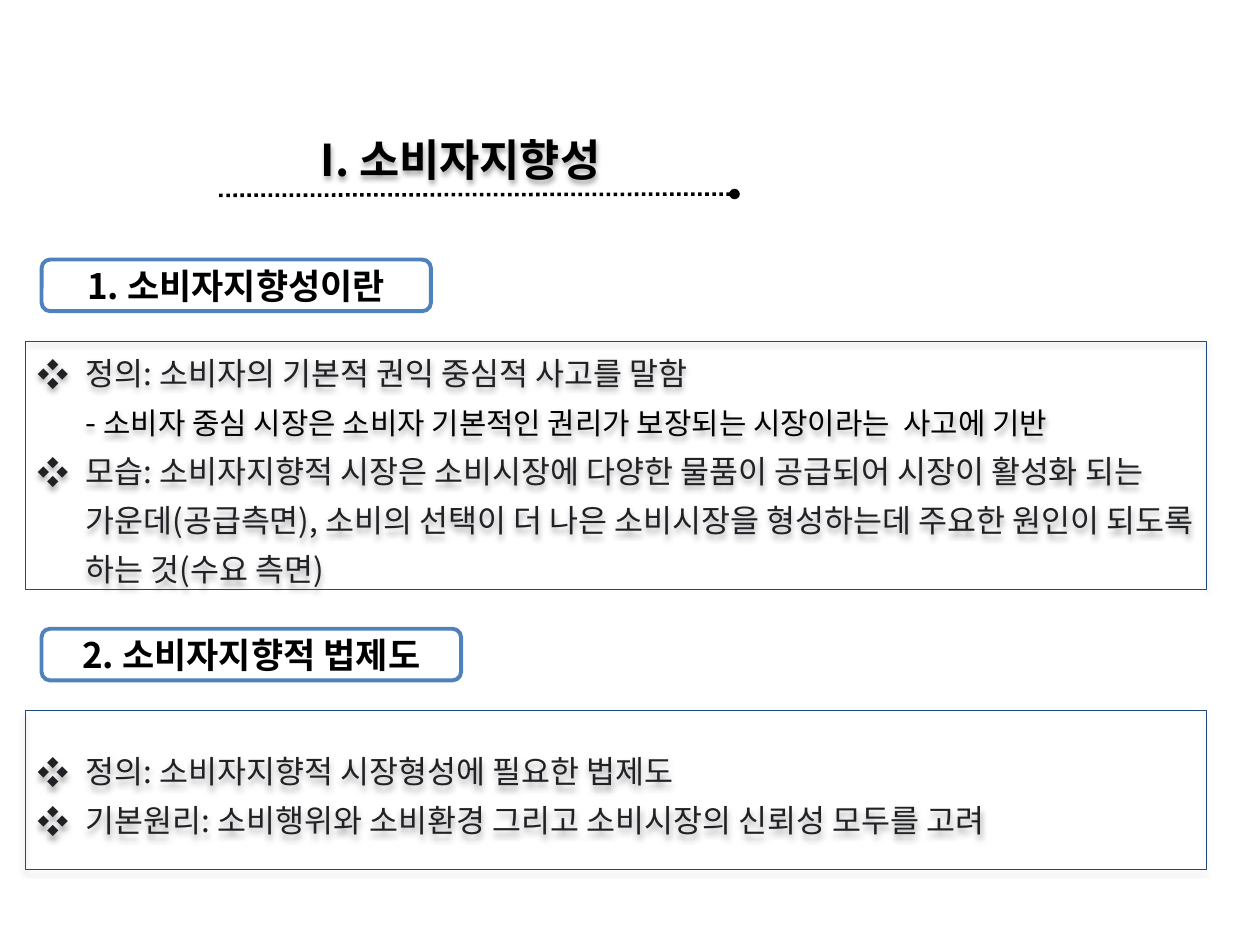
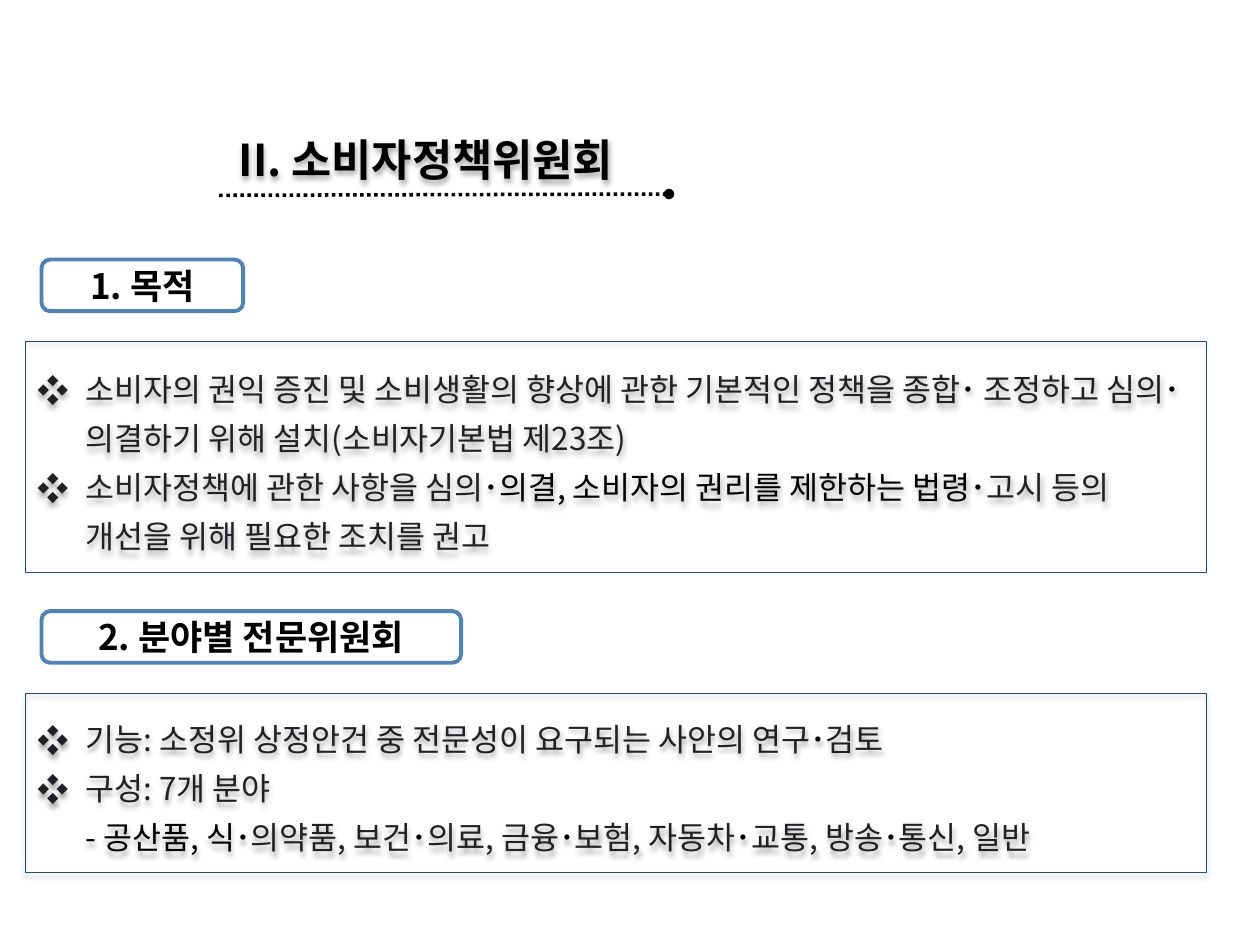
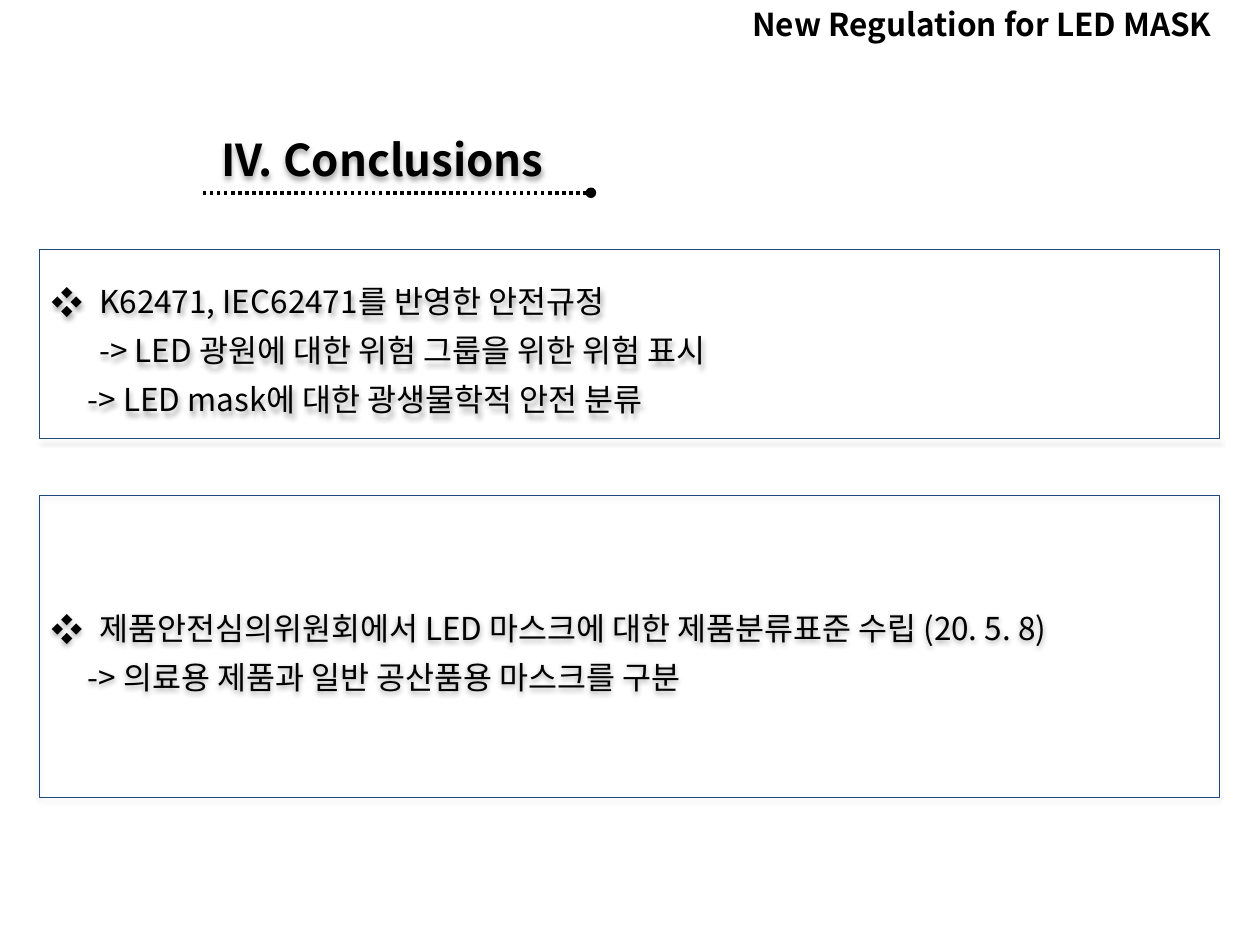
from typing import NamedTuple

from lxml import etree
from pptx import Presentation
from pptx.dml.color import RGBColor
from pptx.enum.dml import MSO_LINE
from pptx.enum.shapes import MSO_CONNECTOR, MSO_SHAPE
from pptx.enum.text import MSO_ANCHOR, PP_ALIGN
from pptx.oxml.ns import qn
from pptx.util import Inches, Pt

BLACK = RGBColor(0x00, 0x00, 0x00)
CHARCOAL = RGBColor(0x20, 0x21, 0x24)
BLUE = RGBColor(0x4F, 0x81, 0xBD)
NAVY = RGBColor(0x1F, 0x49, 0x7D)

BODY_FONT = "Noto Sans CJK KR"
DOT_FONT = "Arial"
BODY_SIZE = 18

RECTANGLE = MSO_SHAPE.RECTANGLE
ROUNDED = MSO_SHAPE.ROUNDED_RECTANGLE
STRAIGHT = MSO_CONNECTOR.STRAIGHT
DOTTED = MSO_LINE.ROUND_DOT
MIDDLE = MSO_ANCHOR.MIDDLE
CENTER = PP_ALIGN.CENTER

COLUMNS, ROWS = 100, 75
SLIDE_WIDTH, SLIDE_HEIGHT = Inches(10), Inches(7.5)
PANEL_WIDTH = 93.7
HEADING_RISE, HEADING_HEIGHT = 6.5, 4.1
HANGING, CONTINUED = 0.38, 0.29


class Span(NamedTuple):
    text: str
    color: RGBColor = CHARCOAL
    size: float = BODY_SIZE
    font: str = BODY_FONT


class Item(NamedTuple):
    spans: list
    bullet: bool = True


def plain(text, color=CHARCOAL, bullet=True):
    return Item([Span(text, color)], bullet)


def dotted(*pieces):
    """Join spans with black middle dots; a string becomes a charcoal span."""
    spans = []
    for piece in pieces:
        if spans:
            spans.append(Span("･", BLACK, font=DOT_FONT))
        spans.append(Span(piece) if isinstance(piece, str) else piece)
    return spans


def set_font(font, properties, span, bold=False):
    """Set Latin and East Asian faces alike, on a run or a paragraph."""
    font.name = span.font
    font.size = Pt(span.size)
    font.bold = bold
    font.color.rgb = span.color
    etree.SubElement(properties, qn("a:ea"), typeface=span.font)


def set_paragraph_font(paragraph, span, bold=False):
    font = paragraph.font
    font.size = Pt(span.size)
    set_font(font, paragraph._p.pPr.find(qn("a:defRPr")), span, bold)


def add_shadow(shape):
    effects = shape._element.spPr.find(qn("a:effectLst"))
    shadow = etree.SubElement(effects, qn("a:outerShdw"), blurRad=str(Pt(3.1)),
                              dist=str(Pt(1.8)), dir="5400000", rotWithShape="0")
    color = etree.SubElement(shadow, qn("a:srgbClr"), val=str(BLACK))
    etree.SubElement(color, qn("a:alpha"), val="35000")


class Deck:
    def __init__(self):
        self.presentation = Presentation()
        self.presentation.slide_width = SLIDE_WIDTH
        self.presentation.slide_height = SLIDE_HEIGHT
        self.page = None

    def new_page(self):
        blank = self.presentation.slide_layouts[6]
        self.page = self.presentation.slides.add_slide(blank)

    def place(self, *lengths):
        """Turn alternating columns and rows into slide lengths."""
        units = (SLIDE_WIDTH / COLUMNS, SLIDE_HEIGHT / ROWS)
        return [round(length * units[index % 2])
                for index, length in enumerate(lengths)]

    def outline(self, kind, area, color=None, width=0):
        """Add an unfilled shape, with a line only if a colour is given."""
        shape = self.page.shapes.add_shape(kind, *self.place(*area))
        shape.shadow.inherit = False
        shape.fill.background()
        if color is None:
            shape.line.fill.background()
        else:
            shape.line.color.rgb = color
            shape.line.width = Pt(width)
        shape.text_frame.word_wrap = True
        shape.text_frame.vertical_anchor = MIDDLE
        return shape

    def caption(self, box, text, size):
        paragraph = box.text_frame.paragraphs[0]
        paragraph.text = text
        paragraph.alignment = CENTER
        set_paragraph_font(paragraph, Span(text, BLACK, size), bold=True)

    def title(self, text, left, width, rule_start, rule_end):
        box = self.outline(ROUNDED, (left, 9.9, width, 5.4))
        add_shadow(box)
        self.caption(box, text, 25)
        rule = self.page.shapes.add_connector(
            STRAIGHT, *self.place(*rule_start, *rule_end))
        rule.line.color.rgb = BLACK
        rule.line.width = Pt(2)
        rule.line.dash_style = DOTTED
        properties = rule._element.spPr
        etree.SubElement(properties.find(qn("a:ln")), qn("a:tailEnd"), type="oval")
        etree.SubElement(properties, qn("a:effectLst"))

    def panel(self, left, top, height, items):
        box = self.outline(RECTANGLE, (left, top, PANEL_WIDTH, height), NAVY, 0.25)
        add_shadow(box)
        frame = box.text_frame
        for index, item in enumerate(items):
            paragraph = frame.add_paragraph() if index else frame.paragraphs[0]
            self.fill_item(paragraph, item)

    def fill_item(self, paragraph, item):
        paragraph.line_spacing = 1.3
        properties = paragraph._p.get_or_add_pPr()
        indent = HANGING if item.bullet else CONTINUED
        properties.set("marL", str(Inches(indent)))
        properties.set("indent", str(-Inches(indent) if item.bullet else 0))
        paragraph.alignment = PP_ALIGN.LEFT
        if item.bullet:
            etree.SubElement(properties, qn("a:buFont"), typeface="Wingdings")
            properties[-1].set("typeface", BODY_FONT)
            etree.SubElement(properties, qn("a:buChar"), char="❖")
        set_paragraph_font(paragraph, item.spans[0])
        for span in item.spans:
            for index, line in enumerate(span.text.split("\n")):
                if index:
                    paragraph.add_line_break()
                if line:
                    run = paragraph.add_run()
                    run.text = line
                    if span[1:] != item.spans[0][1:]:
                        set_font(run.font, run._r.get_or_add_rPr(), span)

    def section(self, heading, heading_width, top, height, items):
        """Add a panel with its numbered heading above it."""
        self.panel(2, top, height, items)
        area = (3.3, top - HEADING_RISE, heading_width, HEADING_HEIGHT)
        self.caption(self.outline(ROUNDED, area, BLUE, 2.25), heading, 20)

    def header(self, text):
        box = self.page.shapes.add_textbox(*self.place(56.3, -0.1, 43.3, 4))
        box.text_frame.word_wrap = True
        self.caption(box, text, BODY_SIZE)


def build_orientation(deck):
    deck.new_page()
    deck.title("I. 소비자지향성", 16.1, 40.9, (17.4, 15.5), (58.3, 15.4))
    deck.section("1. 소비자지향성이란", 30.9, 27.1, 19.7, [
        Item([
            Span("정의: 소비자의 기본적 권익 중심적 사고를 말함\n"),
            Span("- ", BLACK),
            Span("소비자 중심 시장은 소비자 기본적인 권리가 보장되는 시장이라는  사고에 기반",
                 BLACK, 17),
        ]),
        plain("모습: 소비자지향적 시장은 소비시장에 다양한 물품이 공급되어 시장이 활성화 되는 "
              "가운데(공급측면), 소비의 선택이 더 나은 소비시장을 형성하는데 주요한 원인이 "
              "되도록 하는 것(수요 측면)"),
    ])
    deck.section("2. 소비자지향적 법제도", 33.3, 56.4, 12.6, [
        plain("정의: 소비자지향적 시장형성에 필요한 법제도"),
        plain("기본원리: 소비행위와 소비환경 그리고 소비시장의 신뢰성 모두를 고려"),
    ])


def build_committee(deck):
    deck.new_page()
    deck.title("II. 소비자정책위원회", 16.1, 35.4, (17.4, 15.5), (53.1, 15.4))
    deck.section("1. 목적", 16, 27.1, 18.3, [
        Item(dotted("소비자의 권익 증진 및 소비생활의 향상에 관한 기본적인 정책을 종합",
                    " 조정하고 심의", "의결하기 위해 설치(소비자기본법 제23조)")),
        Item(dotted("소비자정책에 관한 사항을 심의",
                    Span("의결, 소비자의 권리를 제한하는 법령", BLACK),
                    "고시 등의 개선을 위해 필요한 조치를 권고")),
    ])
    fields = dotted(Span("- 공산품, 식", BLACK), "의약품, 보건", "의료, 금융",
                    "보험, 자동차", "교통, 방송", "통신, 일반")
    deck.section("2. 분야별 전문위원회", 33.3, 55, 14.2, [
        Item(dotted("기능: 소정위 상정안건 중 전문성이 요구되는 사안의 연구", "검토")),
        Item([Span("구성: 7개 분야\n"), *fields]),
    ])


def build_conclusions(deck):
    deck.new_page()
    deck.title("IV. Conclusions", 14, 32.7, (16.1, 15.3), (46.9, 15.3))
    deck.panel(3.1, 19.8, 15, [
        plain("K62471, IEC62471를 반영한 안전규정\n"
              "-> LED 광원에 대한 위험 그룹을 위한 위험 표시", BLACK),
        plain("-> LED mask에 대한 광생물학적 안전 분류", BLACK, bullet=False),
    ])
    deck.panel(3.1, 39.3, 24, [
        plain("제품안전심의위원회에서 LED 마스크에 대한 제품분류표준 수립 (20. 5. 8)", BLACK),
        plain("-> 의료용 제품과 일반 공산품용 마스크를 구분", BLACK, bullet=False),
    ])
    deck.header("New Regulation for LED MASK")


def main():
    deck = Deck()
    build_orientation(deck)
    build_committee(deck)
    build_conclusions(deck)
    deck.presentation.save("out.pptx")


if __name__ == "__main__":
    main()
